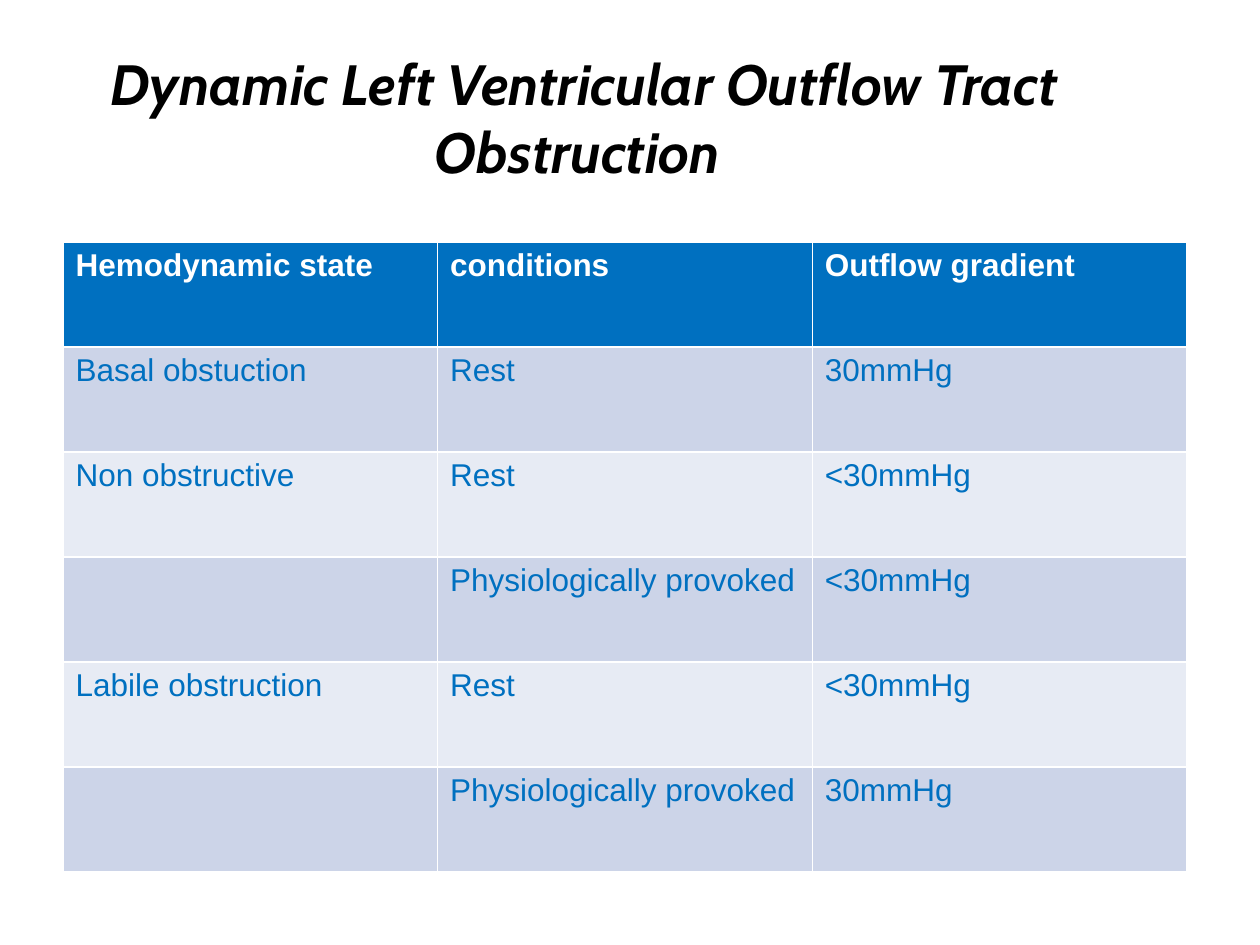
from lxml import etree
from pptx import Presentation
from pptx import util as u
from pptx.dml.color import RGBColor
from pptx.enum import text
from pptx.oxml import ns

BLACK = RGBColor(0x00, 0x00, 0x00)
WHITE = RGBColor(0xFF, 0xFF, 0xFF)
BLUE = RGBColor(0x00, 0x70, 0xC0)
BAND_DARK = RGBColor(0xCC, 0xD4, 0xE8)
BAND_LIGHT = RGBColor(0xE7, 0xEB, 0xF4)

HEADING = " Dynamic Left Ventricular Outflow Tract Obstruction"
GRADIENTS = [
    ("Hemodynamic state", "conditions", "Outflow gradient"),
    ("Basal obstuction", "Rest", "30mmHg"),
    ("Non obstructive", "Rest", "<30mmHg"),
    ("", "Physiologically provoked", "<30mmHg"),
    ("Labile obstruction", "Rest", "<30mmHg"),
    ("", "Physiologically provoked", "30mmHg"),
]

HEADING_FONT = {"name": "Cabin", "size": u.Pt(32.4), "bold": True, "italic": True}
CELL_FONT = {"name": "Arial", "size": u.Pt(18)}
CELL_MARGINS = {
    "margin_left": u.Inches(0.1),
    "margin_top": u.Inches(0.07),
    "margin_right": u.Inches(0.1),
    "margin_bottom": u.Inches(0.05),
}


def set_attributes(target, values):
    for name, value in values.items():
        setattr(target, name, value)


def add_borders(cell, color, width):
    properties = cell._tc.get_or_add_tcPr()
    for side in ("a:lnL", "a:lnR", "a:lnT", "a:lnB"):
        line = etree.SubElement(properties, ns.qn(side), w=str(width))
        fill = etree.SubElement(line, ns.qn("a:solidFill"))
        etree.SubElement(fill, ns.qn("a:srgbClr"), val=str(color))


def add_heading(slide, left, top, width, height):
    heading = slide.shapes.add_textbox(left, top, width, height).text_frame
    heading.word_wrap = True
    heading.vertical_anchor = text.MSO_ANCHOR.MIDDLE
    paragraph = heading.paragraphs[0]
    paragraph.alignment = text.PP_ALIGN.CENTER
    run = paragraph.add_run()
    run.text = HEADING
    set_attributes(run.font, HEADING_FONT)
    run.font.color.rgb = BLACK


def fill_cell(cell, wording, row):
    is_header = row == 0
    set_attributes(cell, CELL_MARGINS)
    add_borders(cell, WHITE, u.Pt(0.96))
    cell.fill.solid()
    band = BAND_DARK if row % 2 else BAND_LIGHT
    cell.fill.fore_color.rgb = BLUE if is_header else band
    if wording:
        paragraph = cell.text_frame.paragraphs[0]
        paragraph.line_spacing = 0.93
        run = paragraph.add_run()
        run.text = wording
        set_attributes(run.font, {**CELL_FONT, "bold": is_header})
        run.font.color.rgb = WHITE if is_header else BLUE


def add_gradient_table(slide, left, top, width, height):
    table = slide.shapes.add_table(
        len(GRADIENTS), len(GRADIENTS[0]), left, top, width, height
    ).table
    for row in table.rows:
        row.height = height // len(GRADIENTS)
    for row, entries in enumerate(GRADIENTS):
        for column, wording in enumerate(entries):
            fill_cell(table.cell(row, column), wording, row)


def main():
    deck = Presentation()
    deck.slide_width, deck.slide_height = u.Inches(10), u.Inches(7.5)
    slide = deck.slides.add_slide(deck.slide_layouts[6])
    add_heading(slide, u.Inches(0.5), u.Inches(0.3), u.Inches(8.17), u.Inches(1.25))
    add_gradient_table(slide, u.Inches(0.5), u.Inches(1.92), u.Inches(8.92), u.Inches(5))
    deck.save("out.pptx")


if __name__ == "__main__":
    main()
